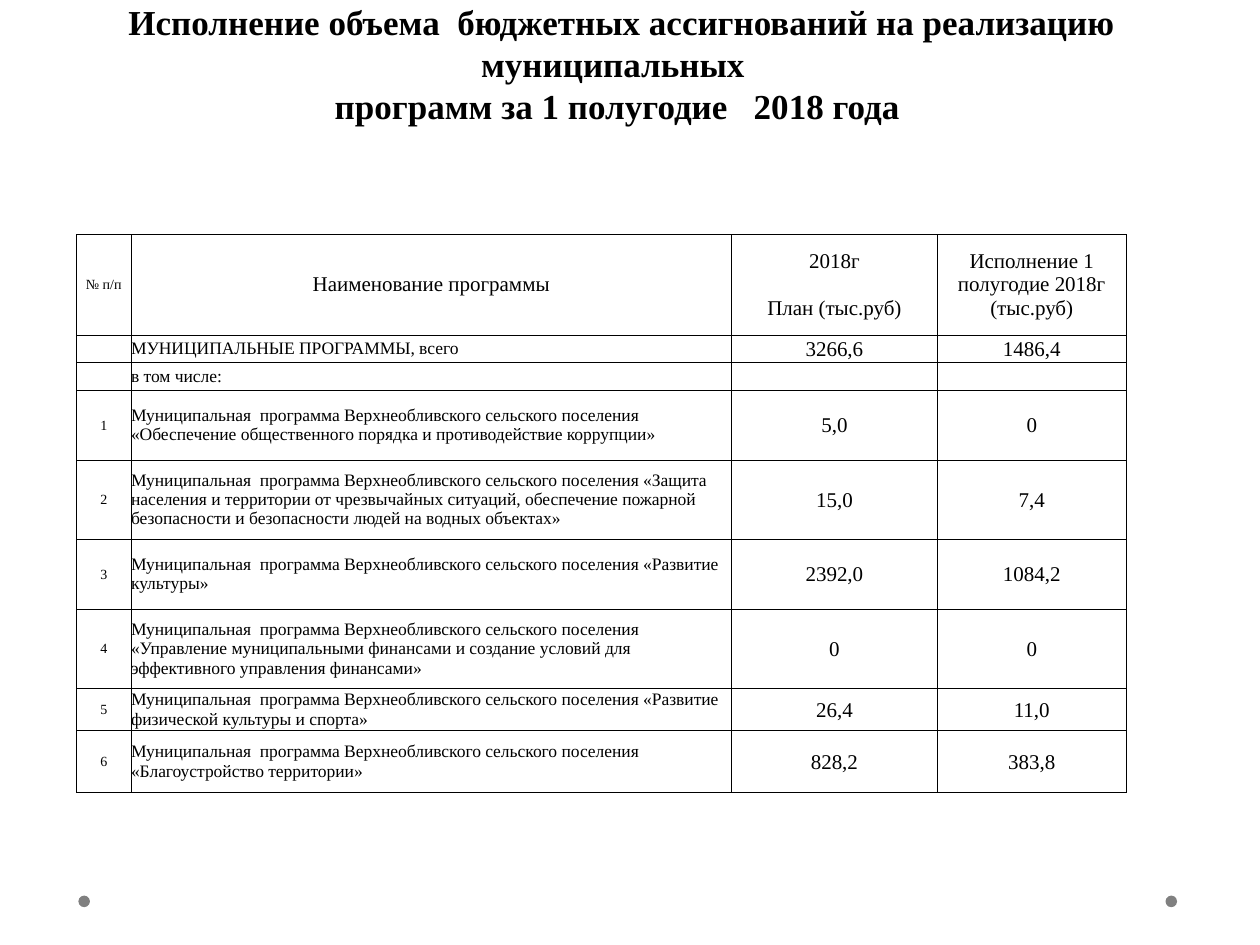
import pptx
import pptx.dml.color
import pptx.enum.shapes
import pptx.enum.text
import pptx.oxml.ns
import pptx.util
from lxml import etree

Pt = pptx.util.Pt
ALIGN = pptx.enum.text.PP_ALIGN
MIDDLE = pptx.enum.text.MSO_ANCHOR.MIDDLE
FONT = "Times New Roman"
COLORS = {"ink": "000000", "paper": "FFFFFF", "dot": "808080"}

TITLE = ("Исполнение объема  бюджетных ассигнований на реализацию муниципальных  \n"
         "программ за 1 полугодие   2018 года ")
PROGRAM = "Муниципальная  программа Верхнеобливского сельского поселения "
ROWS = [
    ("№ п/п", "Наименование программы", "2018г\nПлан (тыс.руб)",
     "Исполнение 1 полугодие 2018г (тыс.руб)"),
    ("", "МУНИЦИПАЛЬНЫЕ ПРОГРАММЫ, всего", "3266,6", "1486,4"),
    ("", "в том числе:", "", ""),
    ("1", PROGRAM + "«Обеспечение общественного порядка и противодействие коррупции»",
     "5,0", "0"),
    ("2", PROGRAM + "«Защита населения и территории от чрезвычайных ситуаций, "
     "обеспечение пожарной безопасности и безопасности людей на водных объектах»",
     "15,0", "7,4"),
    ("3", PROGRAM + "«Развитие культуры»", "2392,0", "1084,2"),
    ("4", PROGRAM + "«Управление муниципальными финансами и создание условий "
     "для эффективного управления финансами»", "0", "0"),
    ("5", PROGRAM + "«Развитие физической культуры и спорта»", "26,4", "11,0"),
    ("6", PROGRAM + "«Благоустройство территории»", "828,2", "383,8"),
]
COLUMN_WIDTHS = [31.2, 343.2, 117.5, 108]
ROW_HEIGHTS = [57.6, 15.6, 15.8, 40, 45.2, 40, 45.2, 24.2, 35.3]
WHITE_NAME_ROWS = (3, 8)


def rgb(name):
    return pptx.dml.color.RGBColor.from_string(COLORS[name])


def format_text(frame, size, align, bold=False):
    frame.word_wrap = True
    for paragraph in frame.paragraphs:
        paragraph.alignment = align
        for run in paragraph.runs:
            run.font.name = FONT
            run.font.size = Pt(size)
            run.font.bold = bold
            run.font.color.rgb = rgb("ink")


def add_title(slide):
    title = slide.shapes.title
    title.left, title.top, title.width, title.height = Pt(16.5), Pt(-3.6), Pt(677.5), Pt(80)
    frame = title.text_frame
    frame.text = TITLE
    frame.vertical_anchor = MIDDLE
    format_text(frame, 20, ALIGN.CENTER, bold=True)
    for paragraph in frame.paragraphs:
        paragraph.line_spacing = Pt(24)
        paragraph.space_before = Pt(0)


def set_borders(cell):
    properties = cell._tc.get_or_add_tcPr()
    for index, side in enumerate(("a:lnL", "a:lnR", "a:lnT", "a:lnB")):
        line = etree.Element(pptx.oxml.ns.qn(side), w=str(Pt(0.5)))
        fill = etree.SubElement(line, pptx.oxml.ns.qn("a:solidFill"))
        etree.SubElement(fill, pptx.oxml.ns.qn("a:srgbClr"), val=COLORS["ink"])
        properties.insert(index, line)


def fill_cell(cell, text, size, align, inset):
    cell.text = text
    cell.vertical_anchor = MIDDLE
    cell.margin_left = cell.margin_right = cell.margin_top = Pt(inset)
    cell.margin_bottom = Pt(0)
    cell.fill.background()
    set_borders(cell)
    format_text(cell.text_frame, size, align)
    if not text:
        # Keeps an empty cell from stretching its row
        etree.SubElement(cell.text_frame.paragraphs[0]._p,
                         pptx.oxml.ns.qn("a:endParaRPr"), sz=str(size * 100))


def add_programs_table(slide):
    table = slide.shapes.add_table(
        len(ROWS), len(COLUMN_WIDTHS), Pt(43.7), Pt(134),
        Pt(sum(COLUMN_WIDTHS)), Pt(sum(ROW_HEIGHTS))).table
    table.first_row = table.horz_banding = False
    for column, width in zip(table.columns, COLUMN_WIDTHS):
        column.width = Pt(width)
    for row, height in zip(table.rows, ROW_HEIGHTS):
        row.height = Pt(height)

    for r, row in enumerate(ROWS):
        name_size = 10 if r else 12
        name_align = ALIGN.LEFT if r else ALIGN.CENTER
        value_inset = 0.7 if r else 0
        styles = [(8, ALIGN.CENTER, 0), (name_size, name_align, 0),
                  (12, ALIGN.CENTER, value_inset), (12, ALIGN.CENTER, value_inset)]
        for c, (text, style) in enumerate(zip(row, styles)):
            fill_cell(table.cell(r, c), text, *style)

    for r in WHITE_NAME_ROWS:
        name_fill = table.cell(r, 1).fill
        name_fill.solid()
        name_fill.fore_color.rgb = rgb("paper")
    table.cell(0, 2).text_frame.paragraphs[1].space_before = Pt(13.4)


def add_dot(slide, left):
    dot = slide.shapes.add_shape(pptx.enum.shapes.MSO_SHAPE.OVAL,
                                 Pt(left), Pt(511.8), Pt(6.6), Pt(6.6))
    dot.shadow.inherit = False
    dot.fill.solid()
    dot.fill.fore_color.rgb = rgb("dot")
    dot.line.fill.background()


def main():
    deck = pptx.Presentation()
    deck.slide_width, deck.slide_height = Pt(720), Pt(540)
    slide = deck.slides.add_slide(deck.slide_layouts.get_by_name("Title Only"))
    for left in (666, 44.8):
        add_dot(slide, left)
    add_programs_table(slide)
    add_title(slide)
    deck.save("out.pptx")


if __name__ == "__main__":
    main()
